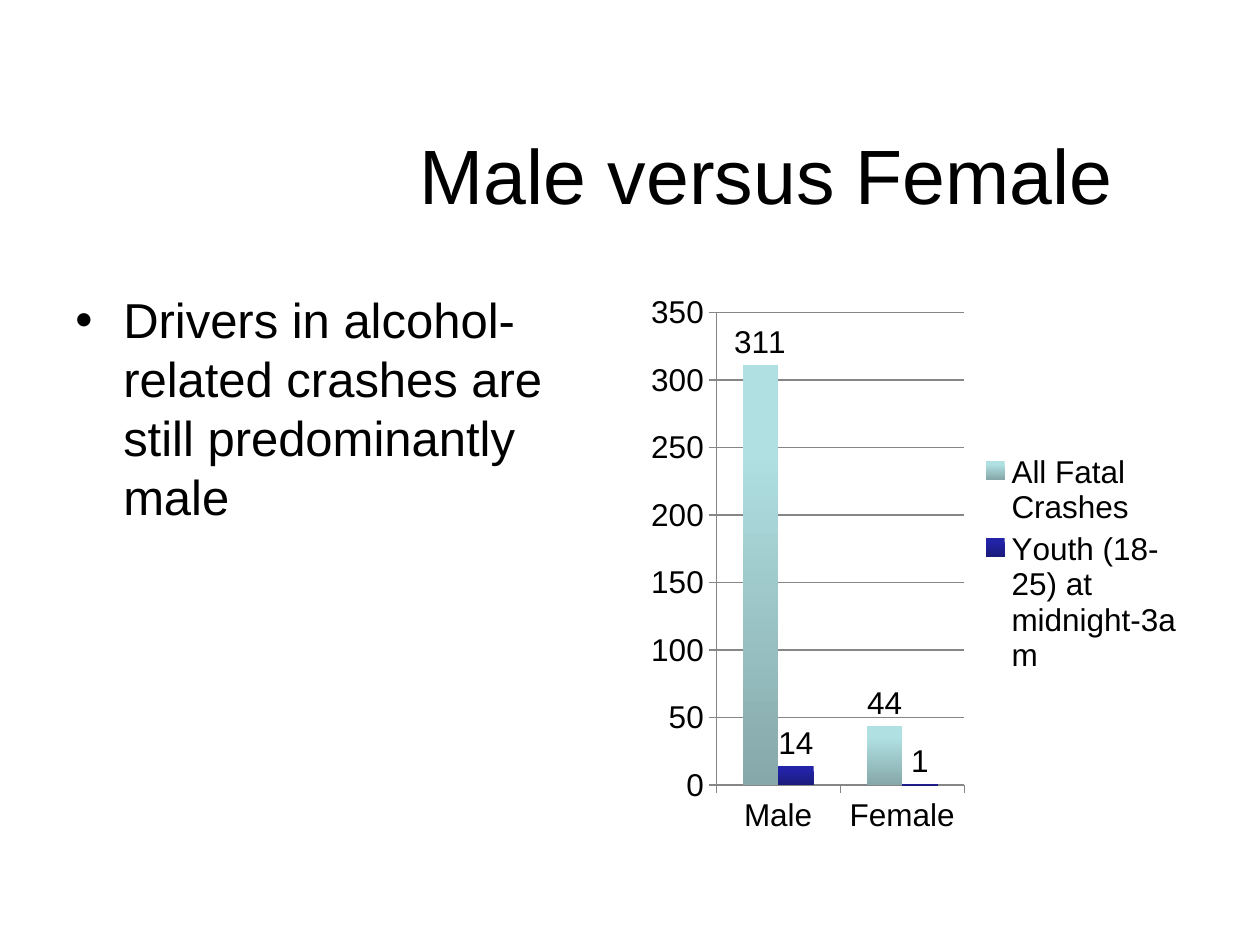
"""Build the slide comparing male and female drivers in fatal crashes."""
from dataclasses import dataclass

from lxml.etree import SubElement
from pptx import Presentation
from pptx.chart.data import CategoryChartData
from pptx.dml.color import RGBColor
from pptx.enum.chart import XL_CHART_TYPE, XL_LABEL_POSITION, XL_LEGEND_POSITION, XL_TICK_MARK
from pptx.enum.text import MSO_ANCHOR, MSO_AUTO_SIZE, PP_ALIGN
from pptx.oxml.ns import qn
from pptx.util import Inches, Pt


@dataclass(frozen=True)
class Theme:
    font: str = "Arial"
    text: RGBColor = RGBColor(0, 0, 0)
    line: RGBColor = RGBColor.from_string("868686")
    bars: tuple = (("B0E0E2", "86A8AA"), ("2323A8", "1B1B7C"))
    title: Pt = Pt(44)
    body: Pt = Pt(28)
    chart: Pt = Pt(18)


theme = Theme()


def style_font(font, size):
    font.name = theme.font
    font.size = size
    font.color.rgb = theme.text


prs = Presentation()
prs.slide_width, prs.slide_height = Inches(10), Inches(7.5)
s = prs.slides.add_slide(prs.slide_layouts[5])

title = s.shapes.title
title.left, title.top = Inches(2.67), Inches(0.75)
title.width, title.height = Inches(6.83), Inches(1.25)
tf = title.text_frame
tf.vertical_anchor = MSO_ANCHOR.MIDDLE
p = tf.paragraphs[0]
p.alignment = PP_ALIGN.CENTER
r = p.add_run()
r.text = "Male versus Female"
style_font(r.font, theme.title)

top, width, height = Inches(2.25), Inches(4.42), Inches(4.45)
body = s.shapes.add_textbox(Inches(0.5), top, width, height)
tf = body.text_frame
tf.word_wrap = True
tf.auto_size = MSO_AUTO_SIZE.NONE
p = tf.paragraphs[0]
pPr = p._p.get_or_add_pPr()
pPr.set("marL", str(Inches(0.38)))
pPr.set("indent", str(-Inches(0.38)))
SubElement(pPr, qn("a:buFont")).set("typeface", theme.font)
SubElement(pPr, qn("a:buChar")).set("char", "•")
r = p.add_run()
r.text = "Drivers in alcohol-related crashes are still predominantly male"
style_font(r.font, theme.body)

data = CategoryChartData()
data.categories = ["Male", "Female"]
data.add_series("All Fatal Crashes", (311, 44))
data.add_series("Youth (18-25) at midnight-3am ", (14, 1))
chart = s.shapes.add_chart(
    XL_CHART_TYPE.COLUMN_CLUSTERED, Inches(5.08), top, width, height, data
).chart
style_font(chart.font, theme.chart)
chart.has_title = False
chart.has_legend = True
chart.legend.position = XL_LEGEND_POSITION.RIGHT
chart.legend.include_in_layout = False

for axis in (chart.category_axis, chart.value_axis):
    axis.major_tick_mark = XL_TICK_MARK.OUTSIDE
    axis.minor_tick_mark = XL_TICK_MARK.NONE
    axis.format.line.color.rgb = theme.line
    axis.format.line.width = Pt(0.75)
grid = chart.value_axis.major_gridlines.format.line
grid.color.rgb = theme.line
grid.width = Pt(0.75)
chart.value_axis.minimum_scale = 0
chart.value_axis.maximum_scale = 350
chart.value_axis.major_unit = 50

plot = chart.plots[0]
plot.gap_width = 150
plot.overlap = 0
plot.vary_by_categories = False
for series, colors in zip(plot.series, theme.bars):
    fill = series.format.fill
    fill.gradient()
    fill.gradient_angle = 270
    for stop, color, position in zip(fill.gradient_stops, colors, (0.2, 1)):
        stop.color.rgb = RGBColor.from_string(color)
        stop.position = position
    labels = series.data_labels
    labels.show_value = True
    labels.position = XL_LABEL_POSITION.OUTSIDE_END
    style_font(labels.font, theme.chart)

prs.save("out.pptx")
